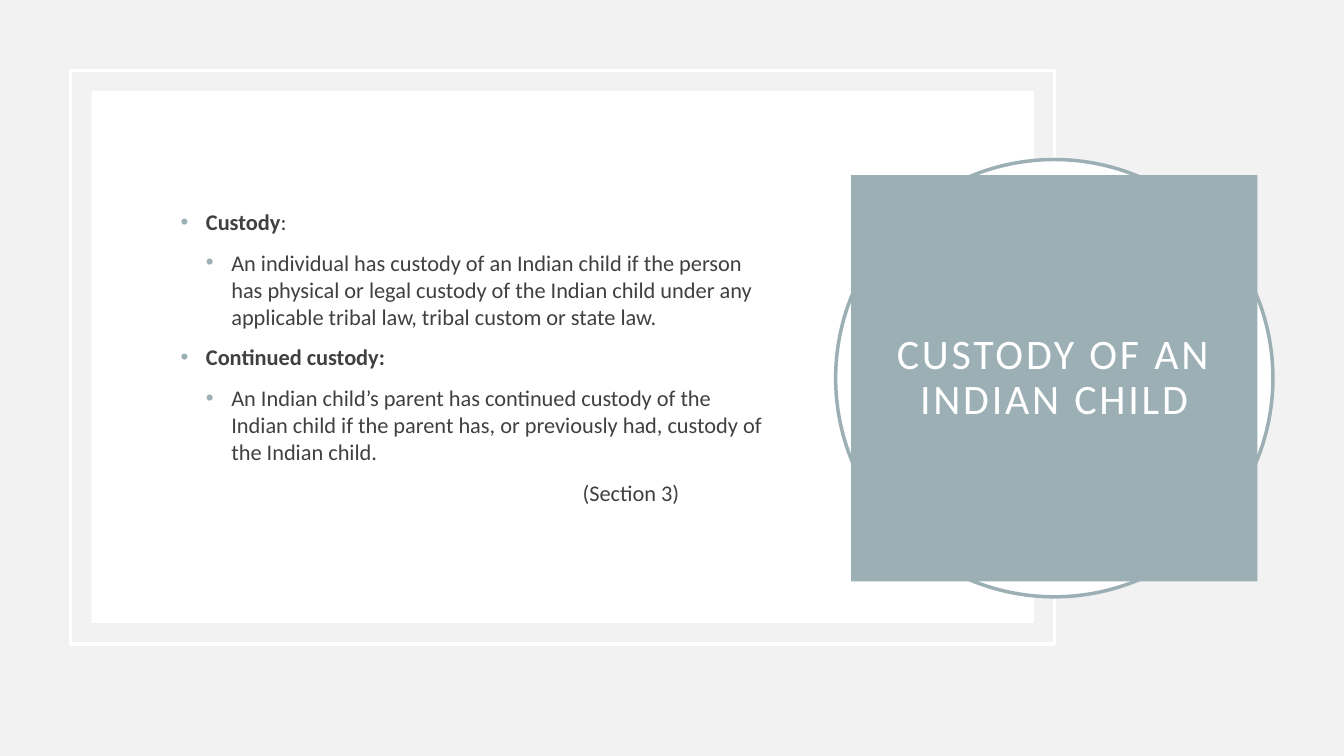
from dataclasses import dataclass

from lxml import etree
from pptx import Presentation
from pptx.dml.color import RGBColor
from pptx.enum.shapes import MSO_SHAPE
from pptx.enum.text import MSO_ANCHOR, MSO_AUTO_SIZE, PP_ALIGN
from pptx.oxml.ns import qn
from pptx.util import Cm, Pt

RECTANGLE, OVAL = MSO_SHAPE.RECTANGLE, MSO_SHAPE.OVAL
MIDDLE, NO_FIT = MSO_ANCHOR.MIDDLE, MSO_AUTO_SIZE.NONE
LEFT, CENTER = PP_ALIGN.LEFT, PP_ALIGN.CENTER

# Content: (level, [(text, bold), ...])
HEADING = "CUSTODY OF AN INDIAN CHILD"
DEFINITIONS = [
    (0, [("Custody", True), (":", False)]),
    (1, [("An individual has custody of an Indian child if the person has physical "
          "or legal custody of the Indian child under any applicable tribal law, "
          "tribal custom or state law.", False)]),
    (0, [("Continued custody:", True)]),
    (1, [("An Indian child’s parent has continued custody of the Indian child if "
          "the parent has, or previously had, custody of the Indian child.", False)]),
]
CITATION = "(Section 3)"


@dataclass(frozen=True)
class Theme:
    font: str = "Calibri"
    backdrop: str = "F2F2F2"
    white: str = "FFFFFF"
    accent: str = "9BAFB5"
    text: str = "404040"
    heading_size: int = 30
    body_size: int = 16
    outline: float = 2.5


THEME = Theme()

# Layout in centimetres: left, top, width, height
FRAME = (1.78, 1.78, 24.79, 14.45)
CARD = (2.31, 2.29, 23.75, 13.41)
BODY = (3.66, 3.56, 15.88, 10.87)
BADGE_CENTER = (26.57, 9.53)
RING_SIZE, BADGE_SIZE = 11.02, 10.24
INDENT_STEP = 0.64
CITATION_INDENT = 10.77


def color(code):
    return RGBColor.from_string(code)


def centered_square(size):
    x, y = BADGE_CENTER
    return x - size / 2, y - size / 2, size, size


def add_shape(kind, box, fill=None, line=None):
    shape = slide.shapes.add_shape(kind, *map(Cm, box))
    shape.shadow.inherit = False
    if fill:
        shape.fill.solid()
        shape.fill.fore_color.rgb = color(fill)
    else:
        shape.fill.background()
    if line:
        shape.line.color.rgb = color(line)
        shape.line.width = Pt(THEME.outline)
    else:
        shape.line.fill.background()


def place(placeholder, box, inset_x, inset_y):
    """Position a placeholder and bring it in front of everything so far."""
    placeholder.left, placeholder.top, placeholder.width, placeholder.height = map(Cm, box)
    frame = placeholder.text_frame
    frame.word_wrap, frame.auto_size, frame.vertical_anchor = True, NO_FIT, MIDDLE
    frame.margin_left = frame.margin_right = Cm(inset_x)
    frame.margin_top = frame.margin_bottom = Cm(inset_y)
    slide.shapes.element.append(placeholder.element)
    return frame


def add_text(paragraph, text, size=THEME.body_size, ink=THEME.text, bold=False, spacing=0):
    run = paragraph.add_run()
    run.text = text
    run.font.name, run.font.size, run.font.bold = THEME.font, Pt(size), bold
    run.font.color.rgb = color(ink)
    if spacing:
        run.font._element.set("spc", str(spacing * 100))


def format_item(paragraph, indent, bullet=True):
    paragraph.alignment, paragraph.line_spacing = LEFT, 1.0
    paragraph.space_before, paragraph.space_after = Pt(10), Pt(0)
    props = paragraph._p.get_or_add_pPr()
    props.set("marL", str(Cm(indent)))
    props.set("indent", str(Cm(-INDENT_STEP if bullet else 0)))
    if not bullet:
        etree.SubElement(props, qn("a:buNone"))
        return
    bullet_color = etree.SubElement(props, qn("a:buClr"))
    etree.SubElement(bullet_color, qn("a:srgbClr"), val=THEME.accent)
    etree.SubElement(props, qn("a:buFont"), typeface="Arial")
    etree.SubElement(props, qn("a:buChar"), char="•")


presentation = Presentation()
presentation.slide_width, presentation.slide_height = Cm(33.87), Cm(19.05)
slide = presentation.slides.add_slide(presentation.slide_layouts[1])
slide.background.fill.solid()
slide.background.fill.fore_color.rgb = color(THEME.backdrop)
heading, definitions = slide.placeholders

# Framed card
add_shape(RECTANGLE, FRAME, line=THEME.white)
add_shape(RECTANGLE, CARD, fill=THEME.white)

# Definitions and citation
body = place(definitions, BODY, 0.25, 0.13)
for number, (level, parts) in enumerate(DEFINITIONS):
    item = body.add_paragraph() if number else body.paragraphs[0]
    item.level = level
    format_item(item, INDENT_STEP * (level + 2))
    for text, bold in parts:
        add_text(item, text, bold=bold)
citation = body.add_paragraph()
format_item(citation, CITATION_INDENT, bullet=False)
add_text(citation, CITATION)

# Title badge in its ring
add_shape(OVAL, centered_square(RING_SIZE), fill=THEME.white, line=THEME.accent)
badge = place(heading, centered_square(BADGE_SIZE), 0.5, 0.5)
heading.fill.solid()
heading.fill.fore_color.rgb = color(THEME.accent)
title = badge.paragraphs[0]
title.alignment, title.line_spacing = CENTER, 0.9
add_text(title, HEADING, size=THEME.heading_size, ink=THEME.white, spacing=2)

presentation.save("out.pptx")
